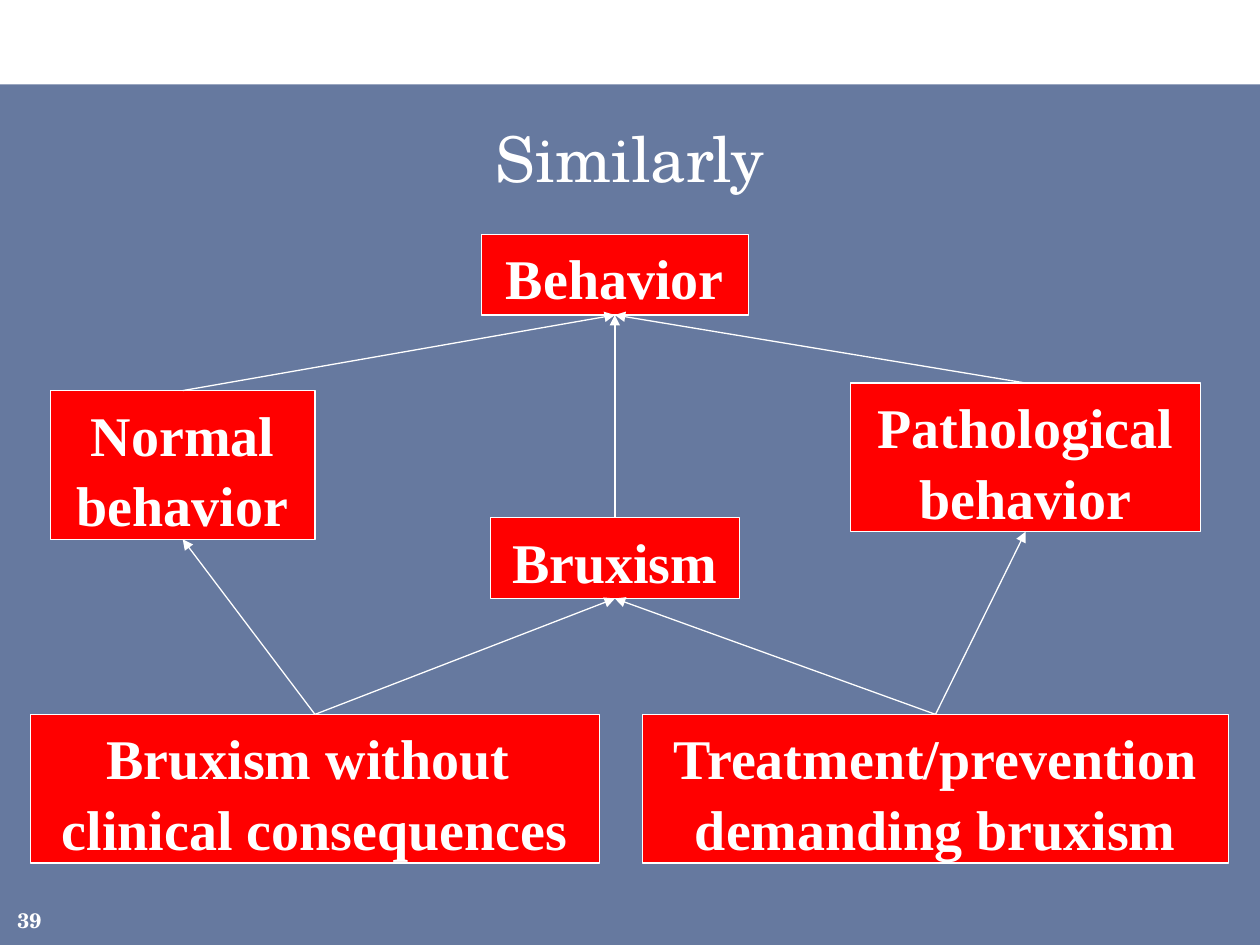
import pptx
import pptx.dml.color
import pptx.enum.shapes
import pptx.enum.text
import pptx.oxml
import pptx.oxml.ns
import pptx.util
from dataclasses import dataclass

Inches = pptx.util.Inches
Pt = pptx.util.Pt
Align = pptx.enum.text.PP_ALIGN
Anchor = pptx.enum.text.MSO_ANCHOR
Rect = pptx.enum.shapes.MSO_SHAPE.RECTANGLE
Straight = pptx.enum.shapes.MSO_CONNECTOR.STRAIGHT
TOP, BOTTOM = 0, 2


@dataclass(frozen=True)
class Theme:
    """Hold the colours, fonts and sizes of the slide."""
    navy: str = "002060"
    red: str = "FF0000"
    white: str = "FFFFFF"
    serif: str = "TeX Gyre Schola"
    roman: str = "Times New Roman"
    head: int = 36
    node: int = 32
    foot: int = 12
    rule: float = 0.75


THEME = Theme()

NODES = {
    "pathology": ((6.75, 3.04, 2.78, 1.18), ["Pathological", "behavior"]),
    "bruxism": ((3.89, 4.11, 1.98, 0.64), ["Bruxism"]),
    "benign": ((0.24, 5.67, 4.52, 1.18), ["Bruxism without ", "clinical consequences"]),
    "treated": ((5.1, 5.67, 4.65, 1.18), ["Treatment/prevention", "demanding bruxism"]),
    "behavior": ((3.82, 1.86, 2.12, 0.64), ["Behavior"]),
    "normal": ((0.4, 3.1, 2.1, 1.18), ["Normal", "behavior"]),
}

LINKS = [
    ("benign", "bruxism"), ("treated", "bruxism"),
    ("normal", "behavior"), ("bruxism", "behavior"), ("pathology", "behavior"),
    ("benign", "normal"), ("treated", "pathology"),
]


def color(code):
    """Turn a hex code into a colour."""
    return pptx.dml.color.RGBColor.from_string(code)


def assign(target, values):
    """Set each attribute of the target from a dict."""
    for name, value in values.items():
        setattr(target, name, value)


def block(slide, box, fill):
    """Add a flat filled rectangle."""
    shape = slide.shapes.add_shape(Rect, *map(Inches, box))
    shape.shadow.inherit = False
    shape.fill.solid()
    shape.fill.fore_color.rgb = color(fill)
    return shape


def write(shape, lines, frame, para, font):
    """Fill a shape with formatted white lines."""
    text = shape.text_frame
    assign(text, frame)
    text.text = "\n".join(lines)
    for item in text.paragraphs:
        assign(item, para)
        assign(item.font, font)
        item.font.color.rgb = color(THEME.white)


def backdrop(slide, box):
    """Add the translucent panel behind the content."""
    panel = block(slide, box, THEME.navy)
    panel.line.fill.background()
    tint = panel.fill._xPr.find(".//" + pptx.oxml.ns.qn("a:srgbClr"))
    alpha = tint.makeelement(pptx.oxml.ns.qn("a:alpha"), {"val": "60000"})
    tint.append(alpha)


def title(slide, box):
    """Add the slide title."""
    shape = slide.shapes.add_textbox(*map(Inches, box))
    write(shape, ["Similarly"],
          {"word_wrap": True, "vertical_anchor": Anchor.MIDDLE},
          {"alignment": Align.CENTER},
          {"name": THEME.serif, "size": Pt(THEME.head)})


def node(slide, box, lines):
    """Add one red box of the diagram."""
    shape = block(slide, box, THEME.red)
    shape.line.color.rgb = color(THEME.white)
    shape.line.width = Pt(THEME.rule)
    write(shape, lines,
          {"word_wrap": False, "vertical_anchor": Anchor.TOP},
          {"alignment": Align.CENTER, "line_spacing": 1.05},
          {"name": THEME.roman, "size": Pt(THEME.node), "bold": True})
    return shape


def arrow(slide, start, end):
    """Link the top of one box to the bottom of another."""
    link = slide.shapes.add_connector(Straight, 0, 0, 0, 0)
    link.begin_connect(start, TOP)
    link.end_connect(end, BOTTOM)
    link.line.color.rgb = color(THEME.white)
    link.line.width = Pt(THEME.rule)
    tip = pptx.oxml.ns.qn("a:tailEnd")
    edge = link.line._get_or_add_ln()
    edge.append(edge.makeelement(tip, {"type": "triangle"}))
    props = link._element.spPr
    props.append(props.makeelement(pptx.oxml.ns.qn("a:effectLst"), {}))


def diagram(slide):
    """Add the boxes and the arrows between them."""
    nodes = {name: node(slide, *data) for name, data in NODES.items()}
    for start, end in LINKS:
        arrow(slide, nodes[start], nodes[end])


def number(slide, box):
    """Add the slide number."""
    shape = slide.shapes.add_textbox(*map(Inches, box))
    sides = ("left", "top", "right", "bottom")
    frame = {f"margin_{side}": 0 for side in sides}
    write(shape, ["39"],
          {**frame, "word_wrap": True, "vertical_anchor": Anchor.BOTTOM},
          {"alignment": Align.RIGHT},
          {"name": THEME.serif, "size": Pt(THEME.foot), "bold": True})


def main():
    """Build and save the slide."""
    deck = pptx.Presentation()
    assign(deck, {"slide_width": Inches(10), "slide_height": Inches(7.5)})
    slide = deck.slides.add_slide(deck.slide_layouts[6])
    backdrop(slide, (0, 0.67, 10, 6.83))
    title(slide, (0.25, 0.83, 9.5, 0.83))
    diagram(slide)
    number(slide, (0, 7.08, 0.33, 0.32))
    deck.save("out.pptx")


if __name__ == "__main__":
    main()
